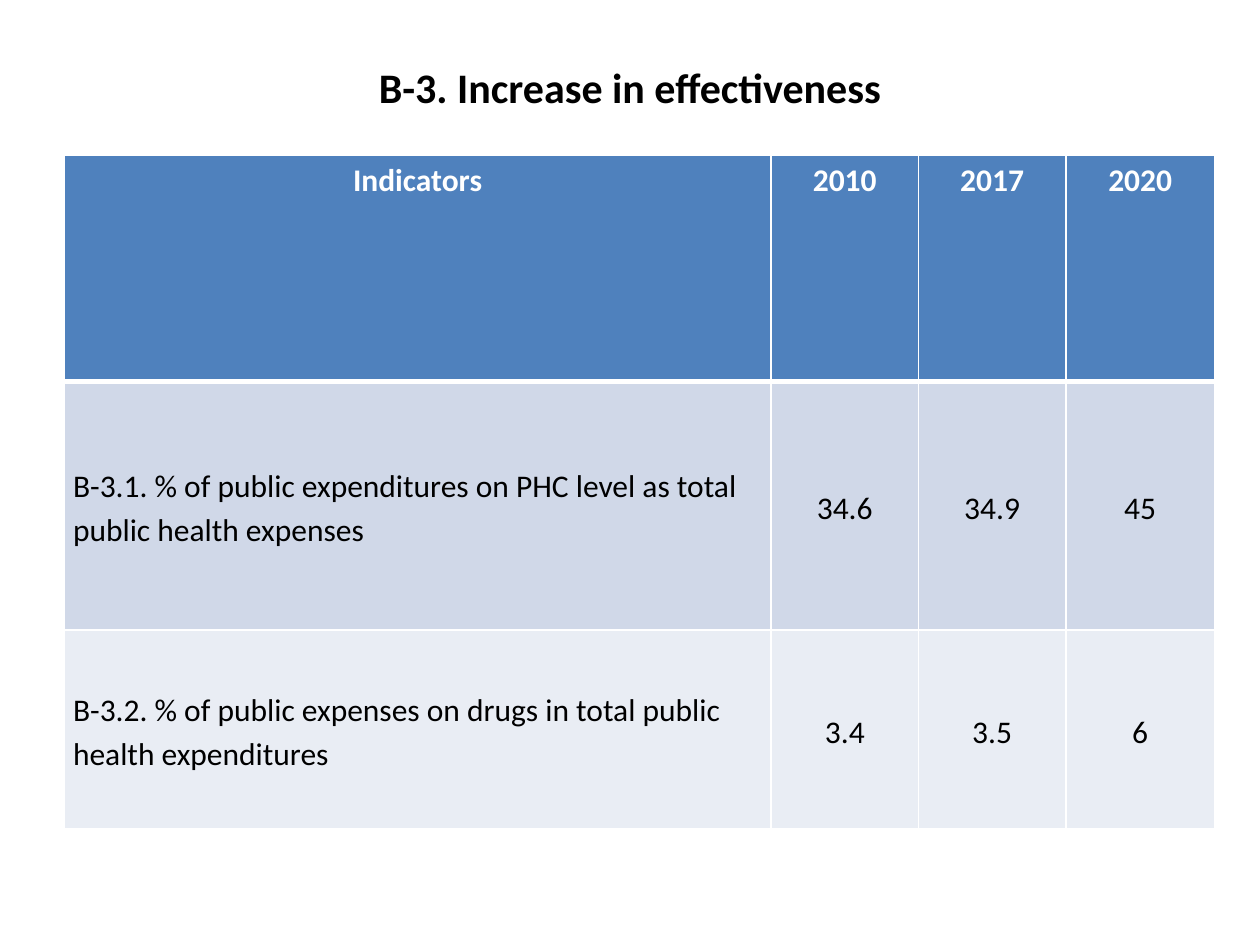
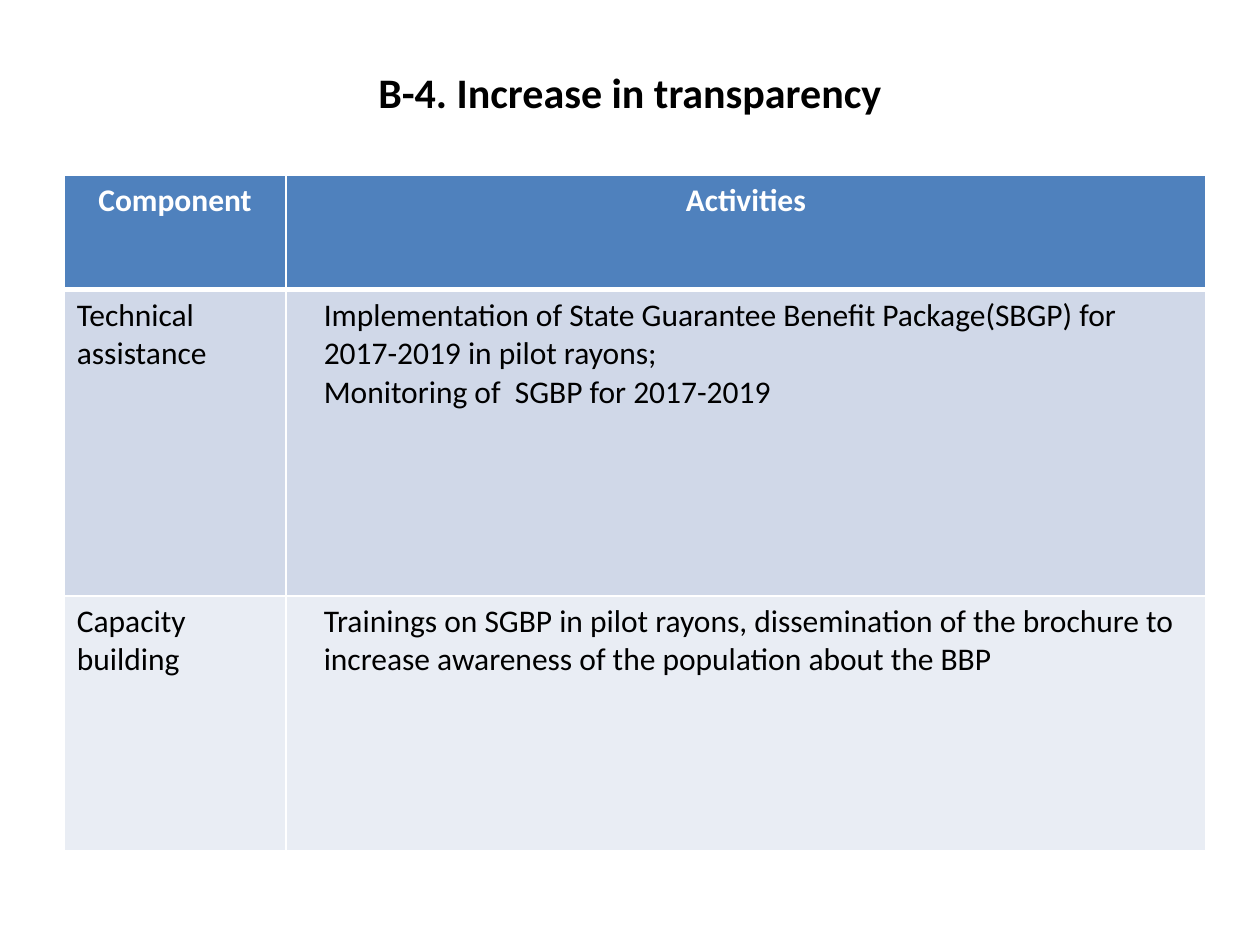
from lxml import etree
from pptx import Presentation
from pptx import util as u
from pptx.dml import color
from pptx.enum import text
from pptx.oxml import ns

FONT = "Calibri"
WHITE, BLACK = "FFFFFF", "000000"
HEADER_FILL = "4F81BD"
BAND_FILLS = ("D0D8E8", "E9EDF4")
CENTER, LEFT = text.PP_ALIGN.CENTER, text.PP_ALIGN.LEFT
MIDDLE, TOP = text.MSO_ANCHOR.MIDDLE, text.MSO_ANCHOR.TOP


def rgb(value):
    return color.RGBColor.from_string(value)


def write(frame, content, size, ink, bold, align, spacing=None):
    frame.text = content
    for paragraph in frame.paragraphs:
        paragraph.alignment = align
        paragraph.line_spacing = spacing
        for run in paragraph.runs:
            run.font.name = FONT
            run.font.size = u.Pt(size)
            run.font.bold = bold
            run.font.color.rgb = rgb(ink)


def add_title(slide, content, height):
    box = slide.shapes.add_textbox(u.Inches(0.5), u.Inches(0.3), u.Inches(9), u.Inches(height))
    frame = box.text_frame
    frame.word_wrap = True
    frame.vertical_anchor = MIDDLE
    write(frame, content, 24, BLACK, True, CENTER)


def style_cell(cell, fill, top=1, bottom=1):
    """Give a cell white borders, with widths in points, and a plain fill."""
    properties = cell._tc.get_or_add_tcPr()
    for side, width in (("L", 1), ("R", 1), ("T", top), ("B", bottom)):
        line = etree.SubElement(properties, ns.qn(f"a:ln{side}"), w=str(u.Pt(width)))
        solid = etree.SubElement(line, ns.qn("a:solidFill"))
        etree.SubElement(solid, ns.qn("a:srgbClr"), val=WHITE)
    cell.fill.solid()
    cell.fill.fore_color.rgb = rgb(fill)


def add_banded_table(slide, top, widths, heights, rows, write_body):
    """Draw a header row and banded body rows; write_body fills each body cell."""
    frame = slide.shapes.add_table(
        len(rows), len(widths), u.Inches(0.51), u.Inches(top),
        u.Inches(sum(widths)), u.Inches(sum(heights)))
    table = frame.table
    for column, width in zip(table.columns, widths):
        column.width = u.Inches(width)
    for row, height in zip(table.rows, heights):
        row.height = u.Inches(height)
    for r, contents in enumerate(rows):
        for c, content in enumerate(contents):
            cell = table.cell(r, c)
            if r == 0:
                style_cell(cell, HEADER_FILL, bottom=3)
                write(cell.text_frame, content, 18, WHITE, True, CENTER)
            else:
                style_cell(cell, BAND_FILLS[(r - 1) % 2], top=3 if r == 1 else 1)
                write_body(cell, c, content)


def write_indicator(cell, column, content):
    cell.vertical_anchor = MIDDLE
    cell.margin_left = cell.margin_right = u.Inches(0.07)
    cell.margin_top = cell.margin_bottom = 0
    write(cell.text_frame, content, 18, BLACK, False, CENTER if column else LEFT, 1.15)


def write_activity(cell, column, content):
    cell.vertical_anchor = TOP
    write(cell.text_frame, content, 18, BLACK, False, LEFT)
    if column:
        for paragraph in cell.text_frame.paragraphs:
            paragraph._p.get_or_add_pPr().set("marL", str(u.Inches(0.2)))


def effectiveness_slide(slide):
    add_title(slide, "В-3. Increase in effectiveness", 0.77)
    rows = (
        ("Indicators", "2010", "2017", "2020"),
        ("В-3.1. % of public expenditures on PHC level as total public health expenses",
         "34.6", "34.9", "45"),
        ("В-3.2. % of public expenses on drugs in total public health expenditures",
         "3.4", "3.5", "6"),
    )
    add_banded_table(slide, 1.23, (5.61, 1.17, 1.17, 1.18), (1.8, 1.97, 1.58),
                     rows, write_indicator)


def transparency_slide(slide):
    add_title(slide, "В-4. Increase in transparency", 0.85)
    rows = (
        ("Component", "Activities"),
        ("Technical assistance",
         "Implementation of State Guarantee Benefit Package(SBGP) for 2017-2019 in pilot rayons;\n"
         "Monitoring of  SGBP for 2017-2019"),
        ("Capacity building",
         "Trainings on SGBP in pilot rayons, dissemination of the brochure to increase "
         "awareness of the population about the BBP"),
    )
    add_banded_table(slide, 1.39, (1.76, 7.3), (0.91, 2.43, 2.02), rows, write_activity)


def main():
    presentation = Presentation()
    presentation.slide_width = u.Inches(10)
    presentation.slide_height = u.Inches(7.5)
    for build in (effectiveness_slide, transparency_slide):
        build(presentation.slides.add_slide(presentation.slide_layouts[6]))
    presentation.save("out.pptx")


if __name__ == "__main__":
    main()
